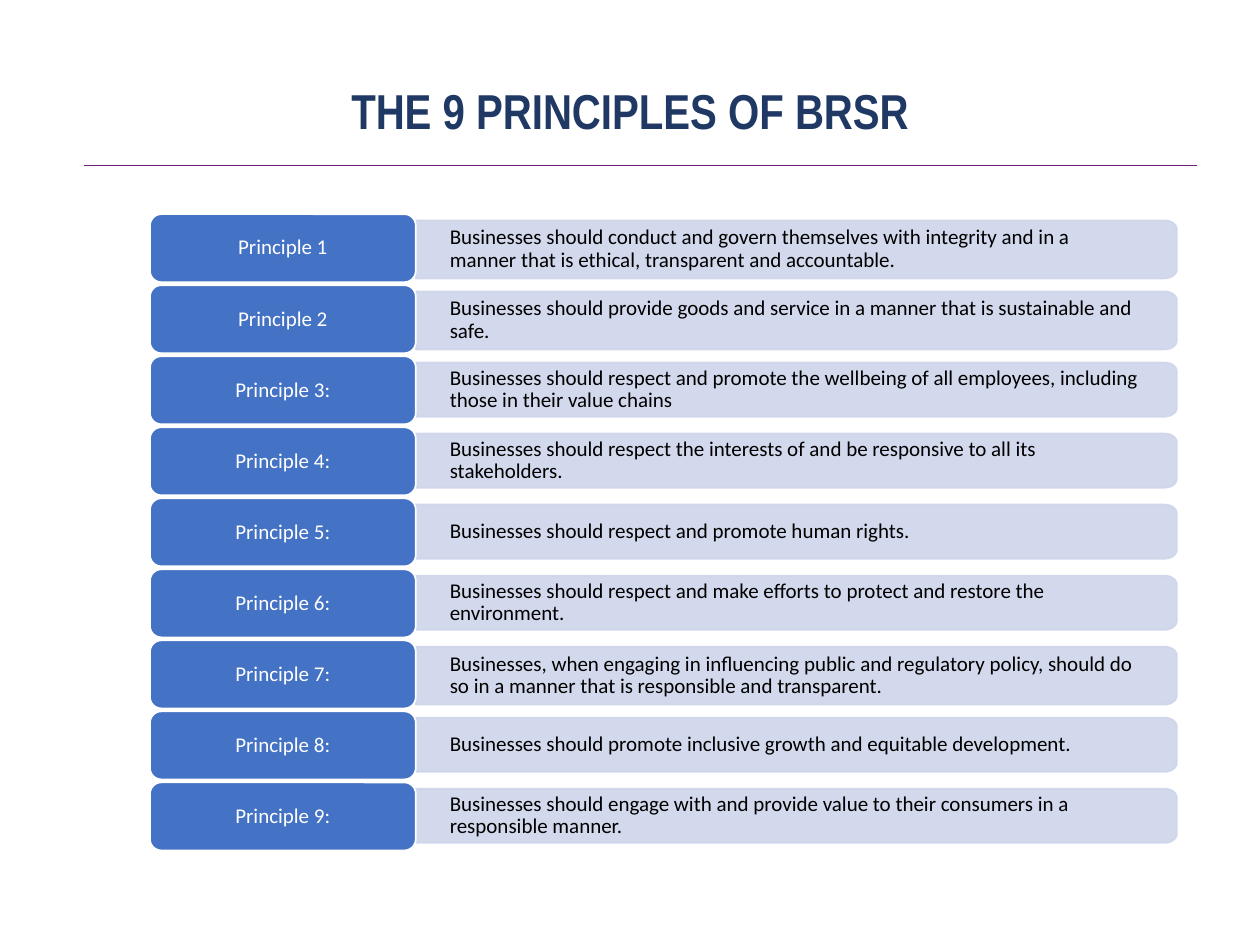
import math

import pptx
import pptx.dml.color
import pptx.enum.shapes
import pptx.enum.text
import pptx.oxml.ns
import pptx.util
from lxml import etree

Inches, Pt = pptx.util.Inches, pptx.util.Pt
ALIGN = pptx.enum.text.PP_ALIGN
qn = pptx.oxml.ns.qn

COLORS = {
    "title": "203864",
    "rule": "6D2077",
    "tab": "4472C4",
    "bar": "CFD5EA",
    "white": "FFFFFF",
    "black": "000000",
}

PRINCIPLES = [
    ("Principle 1", "Businesses should conduct and govern themselves with integrity and in a manner that is ethical, transparent and accountable.", 0.46),
    ("Principle 2", "Businesses should provide goods and service in a manner that is sustainable and safe.", 0.46),
    ("Principle 3:", "Businesses should respect and promote the wellbeing of all employees, including those in their value chains", 0.43),
    ("Principle 4:", "Businesses should respect the interests of and be responsive to all its stakeholders.", 0.43),
    ("Principle 5:", "Businesses should respect and promote human rights.", 0.43),
    ("Principle 6:", "Businesses should respect and make efforts to protect and restore the environment.", 0.43),
    ("Principle 7:", "Businesses, when engaging in influencing public and regulatory policy, should do so in a manner that is responsible and transparent.", 0.46),
    ("Principle 8:", "Businesses should promote inclusive growth and equitable development.", 0.43),
    ("Principle 9:", "Businesses should engage with and provide value to their consumers in a responsible manner.", 0.43),
]


class Deck:
    """Holds the style and the current slide, and draws each kind of element."""

    def __init__(self, s):
        self.s = s
        self.font = "Calibri"
        self.size = 12

    def rgb(self, name):
        return pptx.dml.color.RGBColor.from_string(COLORS[name])

    def label(self, sp, text, color, align, margins, font=None, size=None, bold=False):
        tf = sp.text_frame
        tf.word_wrap = True
        tf.vertical_anchor = pptx.enum.text.MSO_ANCHOR.MIDDLE
        tf.margin_left, tf.margin_right = (Inches(m) for m in margins)
        tf.margin_top = tf.margin_bottom = Inches(0.05)
        p = tf.paragraphs[0]
        p.text = text
        p.alignment = align
        p.line_spacing = 0.9
        p.font.name = font or self.font
        p.font.size = Pt(size or self.size)
        p.font.bold = bold
        p.font.color.rgb = self.rgb(color)

    def paint(self, sp, fill, line):
        sp.shadow.inherit = False
        sp.fill.solid()
        sp.fill.fore_color.rgb = self.rgb(fill)
        sp.line.color.rgb = self.rgb(line)
        sp.line.width = Pt(1)

    def title(self, text, x, y, w, h):
        sp = self.s.shapes.add_textbox(Inches(x), Inches(y), Inches(w), Inches(h))
        self.label(sp, text, "title", ALIGN.CENTER, (0.1, 0.1), "Arial Narrow", 28, True)

    def rule(self, x1, x2, y):
        line = self.s.shapes.add_connector(
            pptx.enum.shapes.MSO_CONNECTOR.STRAIGHT, Inches(x1), Inches(y), Inches(x2), Inches(y))
        line.line.color.rgb = self.rgb("rule")
        line.line.width = Pt(0.5)
        etree.SubElement(line._element.spPr, qn("a:effectLst"))

    def bar(self, text, x, y, w, h, rx=0.1, ry=0.07, steps=8):
        angles = [math.pi / 2 * i / steps for i in range(steps + 1)]
        top = [(x + w - rx + rx * math.sin(a), y + ry - ry * math.cos(a)) for a in angles]
        bottom = [(px, 2 * y + h - py) for px, py in reversed(top)]
        points = [(Inches(px), Inches(py)) for px, py in top + bottom + [(x, y + h)]]
        builder = self.s.shapes.build_freeform(Inches(x), Inches(y))
        builder.add_line_segments(points, close=True)
        sp = builder.convert_to_shape()
        self.paint(sp, "bar", "bar")
        for color in sp._element.spPr.iter(qn("a:srgbClr")):
            etree.SubElement(color, qn("a:alpha"), val="90000")
        self.label(sp, text, "black", ALIGN.LEFT, (0.27, 0.29))

    def tab(self, text, x, y, w, h):
        sp = self.s.shapes.add_shape(
            pptx.enum.shapes.MSO_SHAPE.ROUNDED_RECTANGLE, Inches(x), Inches(y), Inches(w), Inches(h))
        self.paint(sp, "tab", "white")
        self.label(sp, text, "white", ALIGN.CENTER, (0.08, 0.08))


def main():
    prs = pptx.Presentation()
    prs.slide_width, prs.slide_height = Inches(10), Inches(7.5)
    deck = Deck(prs.slides.add_slide(prs.slide_layouts[6]))
    deck.rule(0.67, 9.5, 1.31)
    deck.title("THE 9 PRINCIPLES OF BRSR", 0.5, 0.49, 9, 0.82)
    top, last_top = 1.7, 6.21
    pitch = (last_top - top) / (len(PRINCIPLES) - 1)
    for i, (name, text, height) in enumerate(PRINCIPLES):
        y = top + i * pitch
        deck.bar(text, 3.3, y + 0.05, 6.04, height)
        deck.tab(name, 1.19, y, 2.11, 0.54)
    prs.save("out.pptx")


if __name__ == "__main__":
    main()
